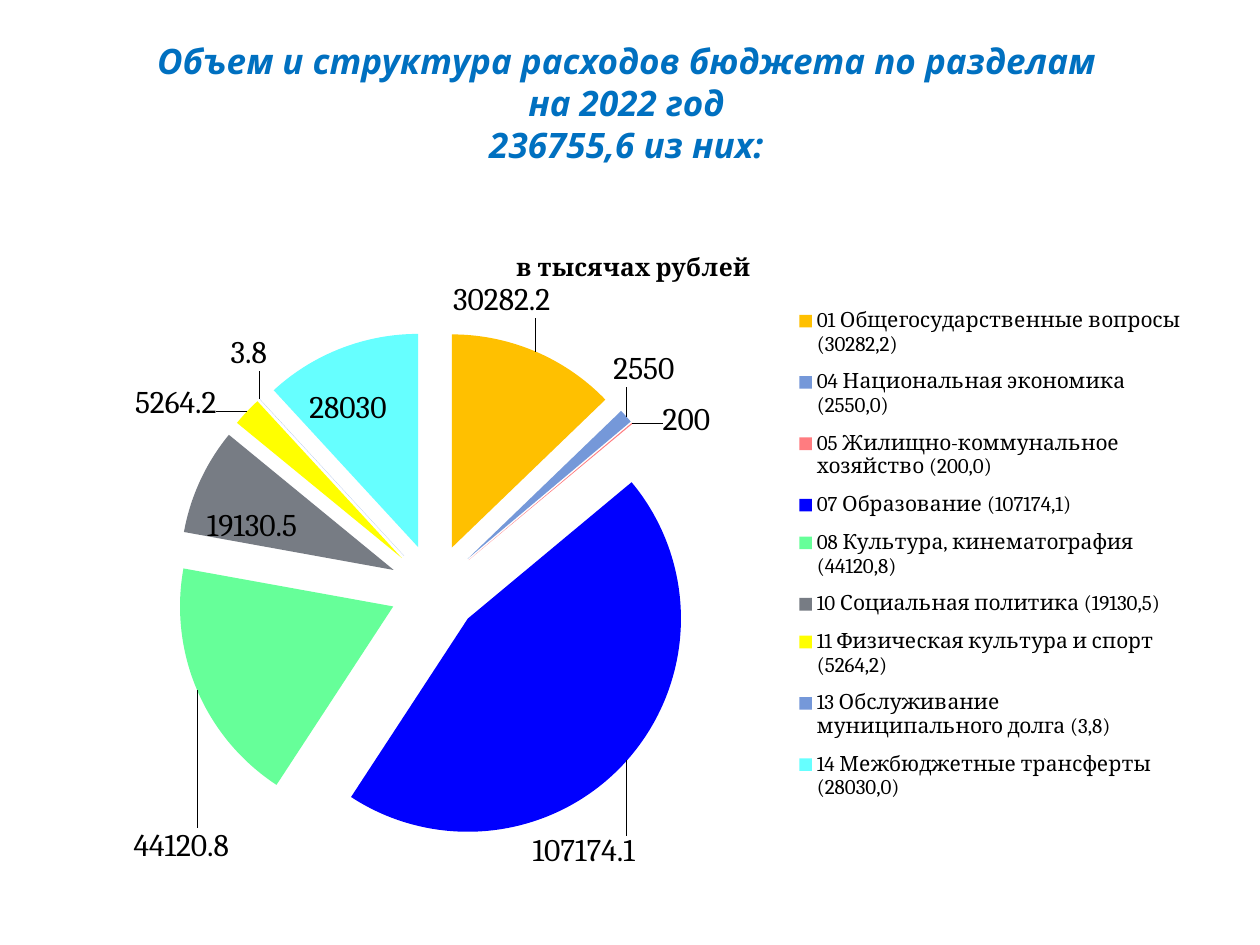
import pptx
import pptx.chart.data
import pptx.dml.color
import pptx.enum.chart
import pptx.enum.text
import pptx.oxml
import pptx.oxml.ns
import pptx.util

Pt = pptx.util.Pt
qn = pptx.oxml.ns.qn
SPOT = pptx.enum.chart.XL_LABEL_POSITION
INK = {
    "title": "0070C0", "text": "000000", "gold": "FFC000", "steel": "7598D9",
    "rose": "FF7C80", "blue": "0000FF", "mint": "66FF99", "gray": "777C84",
    "yellow": "FFFF00", "aqua": "66FFFF",
}
HEAD = {"name": "Noto Sans", "size": Pt(20), "bold": True, "italic": True}
BODY = {"name": "Cambria", "size": Pt(18)}
NOTE = {"name": "Cambria", "size": Pt(12)}
UNIT = {"name": "Cambria", "size": Pt(14), "bold": True}
OUT, IN = SPOT.OUTSIDE_END, SPOT.INSIDE_END

# Section, value, slice colour, label place, label shift as a share of the chart
PARTS = [
    ("01 Общегосударственные вопросы (30282,2)", 30282.2, "gold", OUT, -0.075, -0.04),
    ("04 Национальная экономика (2550,0)", 2550, "steel", OUT, -0.016, -0.037),
    ("05 Жилищно-коммунальное хозяйство (200,0)", 200, "rose", OUT, 0.022, 0.03),
    ("07 Образование (107174,1)", 107174.1, "blue", OUT, -0.088, 0.108),
    ("08 Культура, кинематография (44120,8)", 44120.8, "mint", OUT, 0.034, 0.206),
    ("10 Социальная политика (19130,5)", 19130.5, "gray", IN, 0, 0.037),
    ("11 Физическая культура и спорт (5264,2)", 5264.2, "yellow", OUT, -0.022, 0.023),
    ("13 Обслуживание муниципального долга (3,8)", 3.8, "steel", OUT, 0.011, -0.034),
    ("14 Межбюджетные трансферты (28030,0)", 28030, "aqua", IN, -0.03, 0.052),
]


def rgb(key):
    return pptx.dml.color.RGBColor.from_string(INK[key])


def style(font, form, key="text"):
    for name, val in form.items():
        setattr(font, name, val)
    font.color.rgb = rgb(key)


def place(node, spot, **vals):
    """Give a chart part a manual layout, put in as child number spot."""
    for old in node.findall(qn("c:layout")):
        node.remove(old)
    tags = "".join(f'<c:{k} val="{v}"/>' for k, v in vals.items())
    space = pptx.oxml.ns.nsdecls("c")
    node.insert(spot, pptx.oxml.parse_xml(
        f"<c:layout {space}><c:manualLayout>{tags}</c:manualLayout></c:layout>"))


def add_head(slide, text):
    box = slide.shapes.add_textbox(Pt(34), Pt(16.5), Pt(648), Pt(84))
    frame = box.text_frame
    frame.word_wrap = True
    frame.vertical_anchor = pptx.enum.text.MSO_ANCHOR.MIDDLE
    para = frame.paragraphs[0]
    para.text = text
    para.alignment = pptx.enum.text.PP_ALIGN.CENTER
    for run in para.runs:
        style(run.font, HEAD, "title")


def add_pie(slide, name):
    data = pptx.chart.data.CategoryChartData()
    data.categories = [part[0] for part in PARTS]
    data.add_series(name, [part[1] for part in PARTS])
    chart = slide.shapes.add_chart(
        pptx.enum.chart.XL_CHART_TYPE.PIE_EXPLODED,
        Pt(36), Pt(126), Pt(648), Pt(371), data).chart
    style(chart.font, BODY)
    plot = chart.plots[0]
    plot.vary_by_categories = True
    area = chart.element.find(".//" + qn("c:plotArea"))
    place(area, 0, layoutTarget="inner", xMode="edge", yMode="edge",
          x=0.1, y=0.17, w=0.455, h=0.795)

    # Title
    chart.has_title = True
    frame = chart.chart_title.text_frame
    frame.text = name
    style(frame.paragraphs[0].runs[0].font, UNIT)
    place(chart.element.find(".//" + qn("c:title")), 1,
          xMode="edge", yMode="edge", x=0.396, y=0.04)

    # Legend
    chart.has_legend = True
    key = chart.legend
    key.position = pptx.enum.chart.XL_LEGEND_POSITION.RIGHT
    key.include_in_layout = False
    style(key.font, NOTE)
    place(chart.element.find(".//" + qn("c:legend")), 1,
          xMode="edge", yMode="edge", x=0.645, y=0.115, w=0.345, h=0.8)

    # Slices and their labels
    row = plot.series[0]
    for node in row._element.findall(qn("c:explosion")):
        node.set("val", "21")
    labels = row.data_labels
    labels.show_value = True
    style(labels.font, BODY)
    for i, (_, _, tint, spot, x, y) in enumerate(PARTS):
        point = row.points[i]
        point.format.fill.solid()
        point.format.fill.fore_color.rgb = rgb(tint)
        point.format.line.fill.background()
        point.data_label.position = spot
        style(point.data_label.font, BODY)
    for node, part in zip(row._element.iter(qn("c:dLbl")), PARTS):
        place(node, 1, x=part[4], y=part[5])
    for node in row._element.findall(qn("c:dPt")):
        if node.find(qn("c:explosion")) is None:
            burst = pptx.oxml.parse_xml(
                f'<c:explosion {pptx.oxml.ns.nsdecls("c")} val="21"/>')
            node.find(qn("c:spPr")).addprevious(burst)


def main():
    deck = pptx.Presentation()
    deck.slide_width, deck.slide_height = Pt(720), Pt(540)
    slide = deck.slides.add_slide(deck.slide_layouts[6])
    add_head(slide, "Объем и структура расходов бюджета по разделам\v"
                    "на 2022 год\v236755,6 из них:")
    add_pie(slide, "в тысячах рублей")
    deck.save("out.pptx")


if __name__ == "__main__":
    main()
